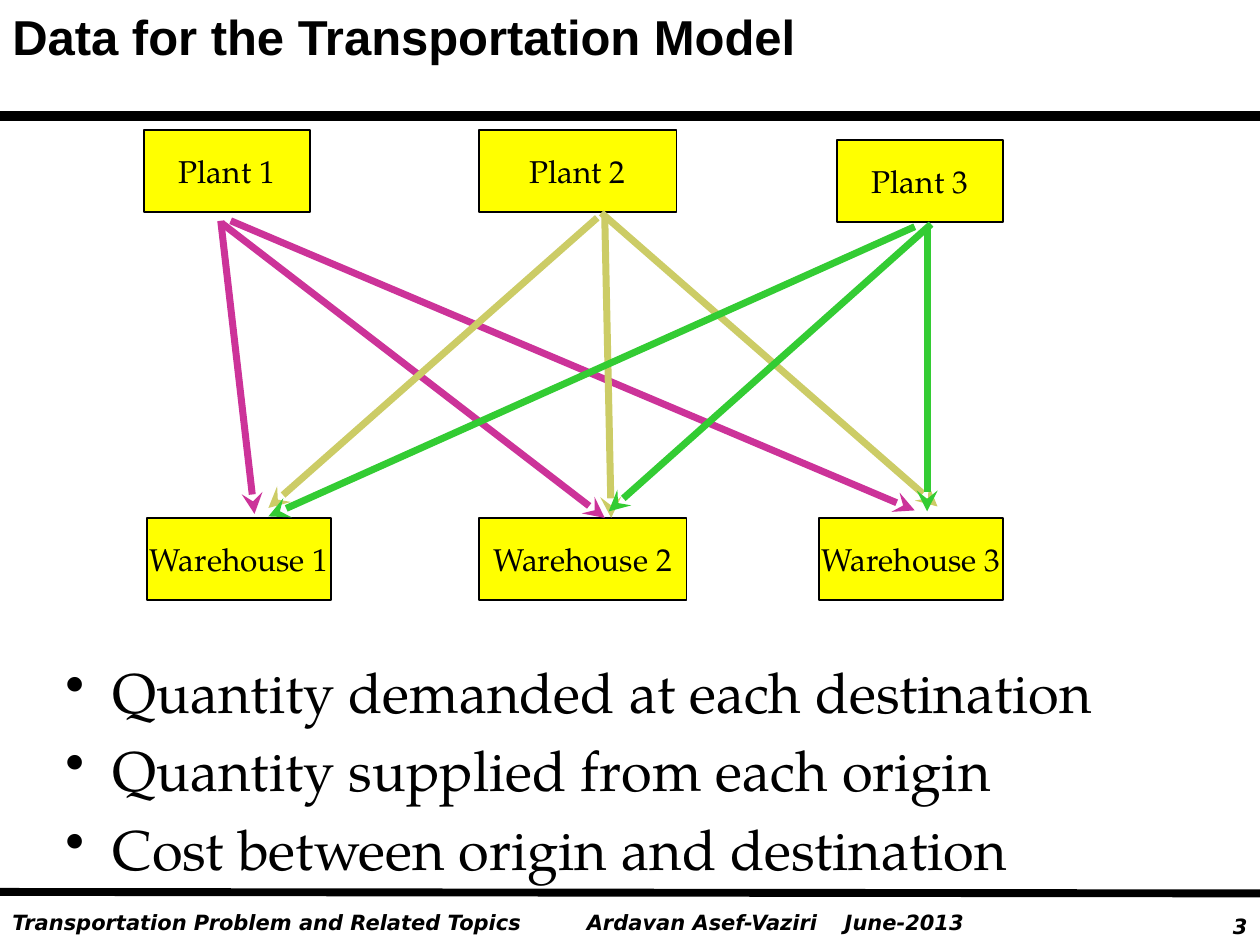
from dataclasses import dataclass

from lxml import etree
from pptx import Presentation
from pptx.dml.color import RGBColor
from pptx.enum.shapes import MSO_CONNECTOR, MSO_SHAPE
from pptx.enum.text import MSO_ANCHOR, PP_ALIGN
from pptx.oxml.ns import qn
from pptx.util import Cm, Pt

STRAIGHT = MSO_CONNECTOR.STRAIGHT
RECTANGLE = MSO_SHAPE.RECTANGLE
MIDDLE = MSO_ANCHOR.MIDDLE
LEFT, CENTER, RIGHT = PP_ALIGN.LEFT, PP_ALIGN.CENTER, PP_ALIGN.RIGHT


@dataclass(frozen=True)
class Theme:
    """Colours, fonts and type sizes of the slide."""
    ink: str = "000000"
    site: str = "FFFF00"
    routes: tuple = ("CC3399", "CCCC66", "33CC33")
    title_font: str = "Arial"
    body_font: str = "TeX Gyre Pagella"
    footer_font: str = "DejaVu Sans"
    title_size: int = 28
    body_size: int = 32
    site_size: int = 18
    footer_size: int = 12


THEME = Theme()
SITE_HEIGHT = 1.65
SITES = [
    ("Plant 1", 2.9, 2.62, 3.35),
    ("Plant 2", 9.65, 2.62, 3.99),
    ("Plant 3", 16.87, 2.82, 3.35),
    ("Warehouse 1", 2.97, 10.44, 3.71),
    ("Warehouse 2", 9.65, 10.44, 4.19),
    ("Warehouse 3", 16.51, 10.44, 3.71),
]
ROUTES_BY_PLANT = [
    [((4.45, 4.45), (5.13, 10.36)), ((4.47, 4.5), (12.19, 10.44)),
     ((4.65, 4.45), (18.44, 10.29))],
    [((12.04, 4.39), (5.41, 10.24)), ((12.19, 4.32), (12.32, 10.44)),
     ((12.12, 4.29), (18.9, 10.21))],
    [((18.69, 4.6), (18.69, 10.31)), ((18.77, 4.52), (12.27, 10.31)),
     ((18.44, 4.57), (5.41, 10.41))],
]
DATA_NEEDED = [
    "Quantity demanded at each destination",
    "Quantity supplied from each origin",
    "Cost between origin and destination",
]


def style(paragraph, font_name, size, bold=False, italic=False):
    """Set the font of a whole paragraph."""
    font = paragraph.font
    font.name, font.size = font_name, Pt(size)
    font.bold, font.italic = bold, italic
    font.color.rgb = RGBColor.from_string(THEME.ink)


def add_text_area(slide, left, top, width, height):
    """Add a wrapping text box and return its text frame."""
    frame = slide.shapes.add_textbox(Cm(left), Cm(top), Cm(width), Cm(height)).text_frame
    frame.word_wrap = True
    return frame


def add_title(slide, title):
    """Add the slide title."""
    heading = add_text_area(slide, 0, 0, 24.97, 1.45).paragraphs[0]
    heading.text = title
    style(heading, THEME.title_font, THEME.title_size, bold=True)


def add_footer(slide, wording, left, top, width, align=LEFT, tab=None):
    """Add one footer entry, with an optional tab stop."""
    entry = add_text_area(slide, left, top, width, 0.76).paragraphs[0]
    entry.text = wording
    entry.alignment = align
    if tab:
        stops = etree.SubElement(entry._p.get_or_add_pPr(), qn("a:tabLst"))
        etree.SubElement(stops, qn("a:tab"), pos=str(Cm(tab)), algn="l")
    style(entry, THEME.footer_font, THEME.footer_size, bold=True, italic=True)


def add_line(slide, start, end, color, weight, arrow=False):
    """Add a straight line, with an arrowhead at its end if asked."""
    ends = [Cm(length) for length in (*start, *end)]
    connector = slide.shapes.add_connector(STRAIGHT, *ends)
    connector.line.color.rgb = RGBColor.from_string(color)
    connector.line.width = Pt(weight)
    if arrow:
        etree.SubElement(connector.line._get_or_add_ln(), qn("a:tailEnd"), type="stealth")
    etree.SubElement(connector._element.spPr, qn("a:effectLst"))


def add_site(slide, name, left, top, width):
    """Add the box of a plant or warehouse."""
    site = slide.shapes.add_shape(RECTANGLE, Cm(left), Cm(top), Cm(width), Cm(SITE_HEIGHT))
    site.shadow.inherit = False
    site.fill.solid()
    site.fill.fore_color.rgb = RGBColor.from_string(THEME.site)
    site.line.color.rgb = RGBColor.from_string(THEME.ink)
    site.line.width = Pt(1)
    frame = site.text_frame
    frame.word_wrap = False
    frame.vertical_anchor = MIDDLE
    label = frame.paragraphs[0]
    label.text = name
    label.alignment = CENTER
    style(label, THEME.body_font, THEME.site_size)


def add_bullets(slide, items):
    """Add the bulleted list of data needed."""
    frame = add_text_area(slide, 1.07, 13.13, 21.59, 5.28)
    for index, item in enumerate(items):
        bullet = frame.add_paragraph() if index else frame.paragraphs[0]
        bullet.text = item
        properties = bullet._p.get_or_add_pPr()
        properties.set("marL", str(Cm(0.95)))
        properties.set("indent", str(-Cm(0.95)))
        if index:
            bullet.space_before = Pt(THEME.body_size * 0.2)
        etree.SubElement(properties, qn("a:buChar"), char="•")
        style(bullet, THEME.body_font, THEME.body_size)


def main():
    """Build and save the slide."""
    deck = Presentation()
    deck.slide_width, deck.slide_height = Cm(25.4), Cm(19.05)
    slide = deck.slides.add_slide(deck.slide_layouts[6])
    add_footer(slide, "3", 23.5, 18.29, 1.9, align=RIGHT)
    add_footer(slide, "Ardavan Asef-Vaziri\tJune-2013", 11.58, 18.21, 8.51, tab=5.2)
    add_footer(slide, "Transportation Problem and Related Topics", 0, 18.21, 11.86)
    add_line(slide, (0, 2.34), (25.4, 2.34), THEME.ink, 6)
    add_line(slide, (0, 17.98), (25.4, 18.01), THEME.ink, 4.5)
    for site in SITES:
        add_site(slide, *site)
    for color, routes in zip(THEME.routes, ROUTES_BY_PLANT):
        for plant, warehouse in routes:
            add_line(slide, plant, warehouse, color, 4, arrow=True)
    add_title(slide, "Data for the Transportation Model")
    add_bullets(slide, DATA_NEEDED)
    deck.save("out.pptx")


if __name__ == "__main__":
    main()
